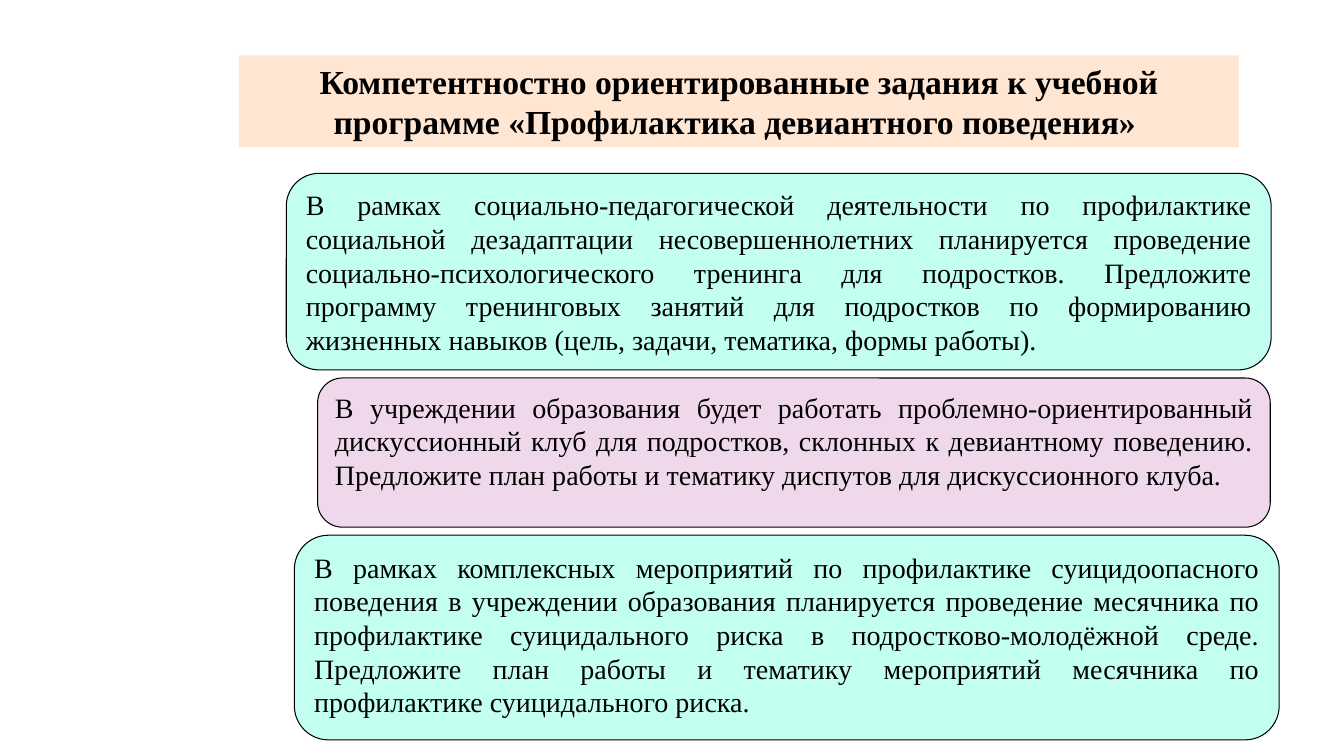
from pptx import Presentation
from pptx.dml.color import RGBColor
from pptx.enum.shapes import MSO_SHAPE
from pptx.enum.text import MSO_ANCHOR, MSO_AUTO_SIZE, PP_ALIGN
from pptx.util import Inches, Pt

COLORS = {
    "peach": "FEE6D2",
    "mint": "C2FFF0",
    "lilac": "EFD7EC",
    "black": "000000",
}

TITLE = "Компетентностно ориентированные задания к учебной программе «Профилактика девиантного поведения» "

TASKS = [
    (21.3, 73.28, 26, "mint",
     "В рамках социально-педагогической деятельности по профилактике социальной "
     "дезадаптации несовершеннолетних планируется проведение социально-психологического "
     "тренинга для подростков. Предложите программу тренинговых занятий для подростков "
     "по формированию жизненных навыков (цель, задачи, тематика, формы работы)."),
    (23.63, 70.88, 19.73, "lilac",
     "В учреждении образования будет работать проблемно-ориентированный дискуссионный "
     "клуб для подростков, склонных к девиантному поведению. Предложите план работы "
     "и тематику диспутов для дискуссионного клуба."),
    (21.9, 73.28, 27.07, "mint",
     "В рамках комплексных мероприятий по профилактике суицидоопасного поведения "
     "в учреждении образования планируется проведение месячника по профилактике "
     "суицидального риска в подростково-молодёжной среде. Предложите план работы "
     "и тематику мероприятий месячника по профилактике суицидального риска."),
]


def place(shape, left, top, width, height, fill):
    shape.left, shape.width = int(left * column), int(width * column)
    shape.top, shape.height = int(top * row), int(height * row)
    shape.fill.solid()
    shape.fill.fore_color.rgb = RGBColor.from_string(COLORS[fill])


def write(shape, text, size, bold, alignment, anchor):
    frame = shape.text_frame
    frame.word_wrap = True
    frame.auto_size = MSO_AUTO_SIZE.NONE
    frame.vertical_anchor = anchor
    paragraph = frame.paragraphs[0]
    paragraph.alignment = alignment
    run = paragraph.add_run()
    run.text = text
    run.font.name = "Times New Roman"
    run.font.size = Pt(size)
    run.font.bold = bold
    run.font.color.rgb = RGBColor.from_string(COLORS["black"])


presentation = Presentation()
presentation.slide_width = Inches(13.33)
presentation.slide_height = Inches(7.5)
column = presentation.slide_width / 100
row = presentation.slide_height / 100

slide = presentation.slides.add_slide(presentation.slide_layouts[5])

title = slide.shapes.title
place(title, 17.78, 7.33, 74.4, 12.13, "peach")
write(title, TITLE, 24, True, PP_ALIGN.CENTER, MSO_ANCHOR.MIDDLE)

top = 22.93
gap = 1.07
for left, width, height, fill, text in TASKS:
    card = slide.shapes.add_shape(MSO_SHAPE.ROUNDED_RECTANGLE, 0, 0, 0, 0)
    card.shadow.inherit = False
    place(card, left, top, width, height, fill)
    card.line.color.rgb = RGBColor.from_string(COLORS["black"])
    card.line.width = Pt(0.75)
    write(card, text, 20, False, PP_ALIGN.JUSTIFY, MSO_ANCHOR.TOP)
    top += height + gap

presentation.save("out.pptx")
